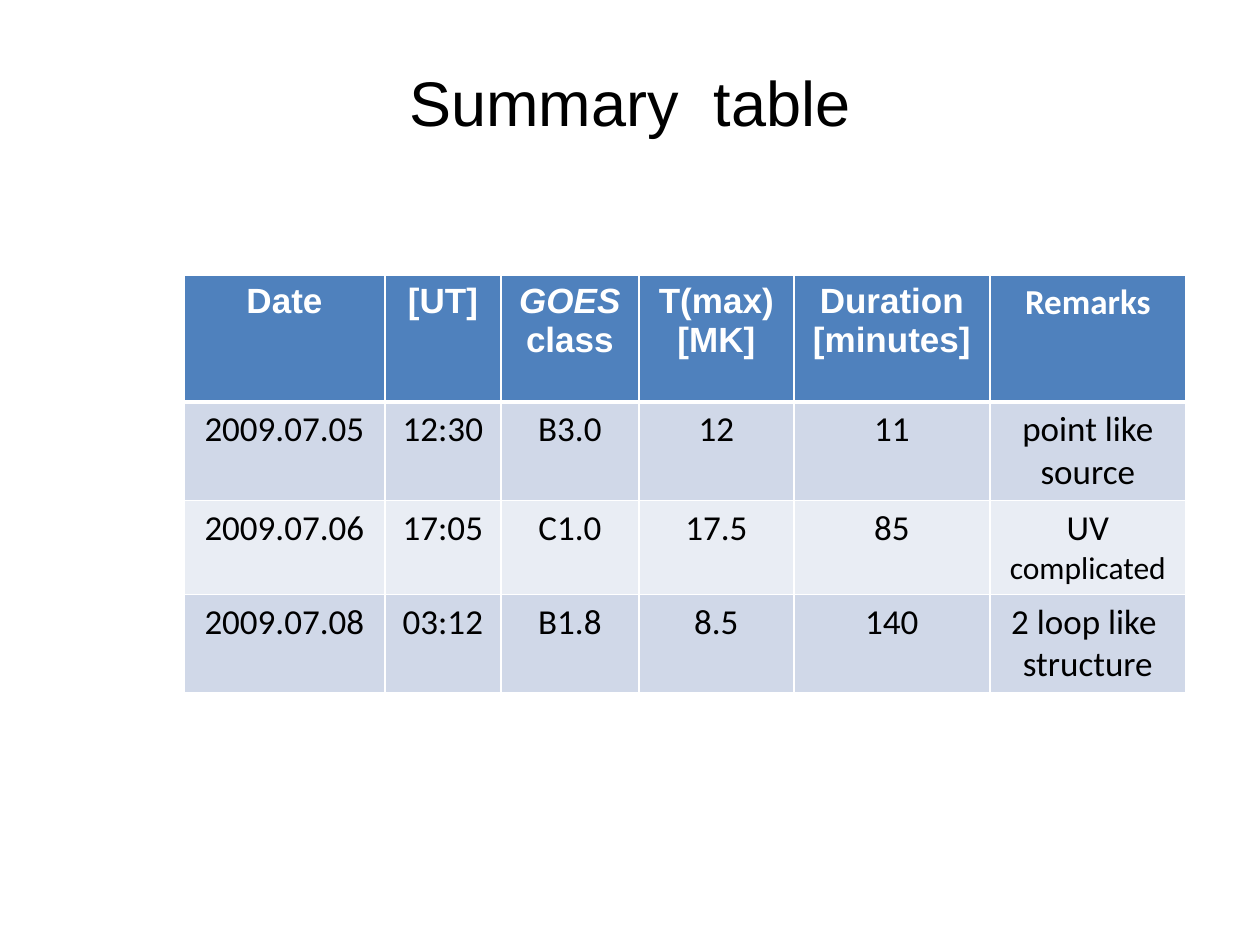
from typing import NamedTuple

from lxml.etree import SubElement
from pptx import Presentation
from pptx.dml.color import RGBColor
from pptx.enum.text import MSO_ANCHOR, PP_ALIGN
from pptx.oxml.ns import qn
from pptx.util import Pt

PX = 914400 // 126
COLORS = {
    "ink": "000000",
    "white": "FFFFFF",
    "header": "4F81BD",
    "odd": "D0D8E8",
    "even": "E9EDF4",
}


class Column(NamedTuple):
    heading: str
    width: int
    font: str = "Arial"


COLUMNS = [
    Column("Date", 201),
    Column("[UT]", 116),
    Column("GOES\nclass", 138),
    Column("T(max)\n[MK]", 155),
    Column("Duration\n[minutes]", 196),
    Column("Remarks", 196, "Calibri"),
]
FLARES = [
    ("2009.07.05", "12:30", "B3.0", "12", "11", "point like\nsource"),
    ("2009.07.06", "17:05", "C1.0", "17.5", "85", "UV\ncomplicated"),
    ("2009.07.08", "03:12", "B1.8", "8.5", "140", "2 loop like \nstructure"),
]
HEADER_HEIGHT, ROW_HEIGHT = 127, 73
SMALLER = {"complicated": 18}
ITALIC = {"GOES"}


def write(frame, text: str, *, size=20, font="Calibri", color="ink", bold=False) -> None:
    """Put each line of text into its own centred paragraph."""
    for index, line in enumerate(text.split("\n")):
        paragraph = frame.add_paragraph() if index else frame.paragraphs[0]
        paragraph.alignment = PP_ALIGN.CENTER
        run = paragraph.add_run()
        run.text = line
        run.font.size = Pt(SMALLER.get(line, size))
        run.font.name = font
        run.font.bold = bold
        run.font.italic = line in ITALIC
        run.font.color.rgb = RGBColor.from_string(COLORS[color])


def style_cell(cell, fill: str, bottom: int = 1, top: int = 1) -> None:
    """Set white borders, with widths in points, and the fill."""
    properties = cell._tc.get_or_add_tcPr()
    for side, width in (("lnL", 1), ("lnR", 1), ("lnT", top), ("lnB", bottom)):
        line = SubElement(properties, qn(f"a:{side}"), w=str(Pt(width)))
        solid = SubElement(line, qn("a:solidFill"))
        SubElement(solid, qn("a:srgbClr"), val=COLORS["white"])
    cell.fill.solid()
    cell.fill.fore_color.rgb = RGBColor.from_string(COLORS[fill])


def add_title(slide) -> None:
    title = slide.shapes.title
    title.left, title.top, title.width, title.height = (v * PX for v in (63, 38, 1134, 127))
    title.text_frame.vertical_anchor = MSO_ANCHOR.MIDDLE
    write(title.text_frame, "Summary  table", size=36, font="Arial")


def add_flare_table(slide) -> None:
    width = sum(column.width for column in COLUMNS)
    frame = slide.shapes.add_table(
        len(FLARES) + 1, len(COLUMNS), 184 * PX, 275 * PX, width * PX, 412 * PX
    )
    table = frame.table
    for row in table.rows:
        row.height = ROW_HEIGHT * PX
    table.rows[0].height = HEADER_HEIGHT * PX

    for c, column in enumerate(COLUMNS):
        table.columns[c].width = column.width * PX
        heading = table.cell(0, c)
        write(heading.text_frame, column.heading, font=column.font, color="white", bold=True)
        style_cell(heading, "header", bottom=3)
        for r, flare in enumerate(FLARES, start=1):
            cell = table.cell(r, c)
            write(cell.text_frame, flare[c])
            style_cell(cell, "odd" if r % 2 else "even", top=3 if r == 1 else 1)


def main() -> None:
    deck = Presentation()
    deck.slide_width, deck.slide_height = 1260 * PX, 945 * PX
    slide = deck.slides.add_slide(deck.slide_layouts[5])
    add_title(slide)
    add_flare_table(slide)
    deck.save("out.pptx")


if __name__ == "__main__":
    main()
